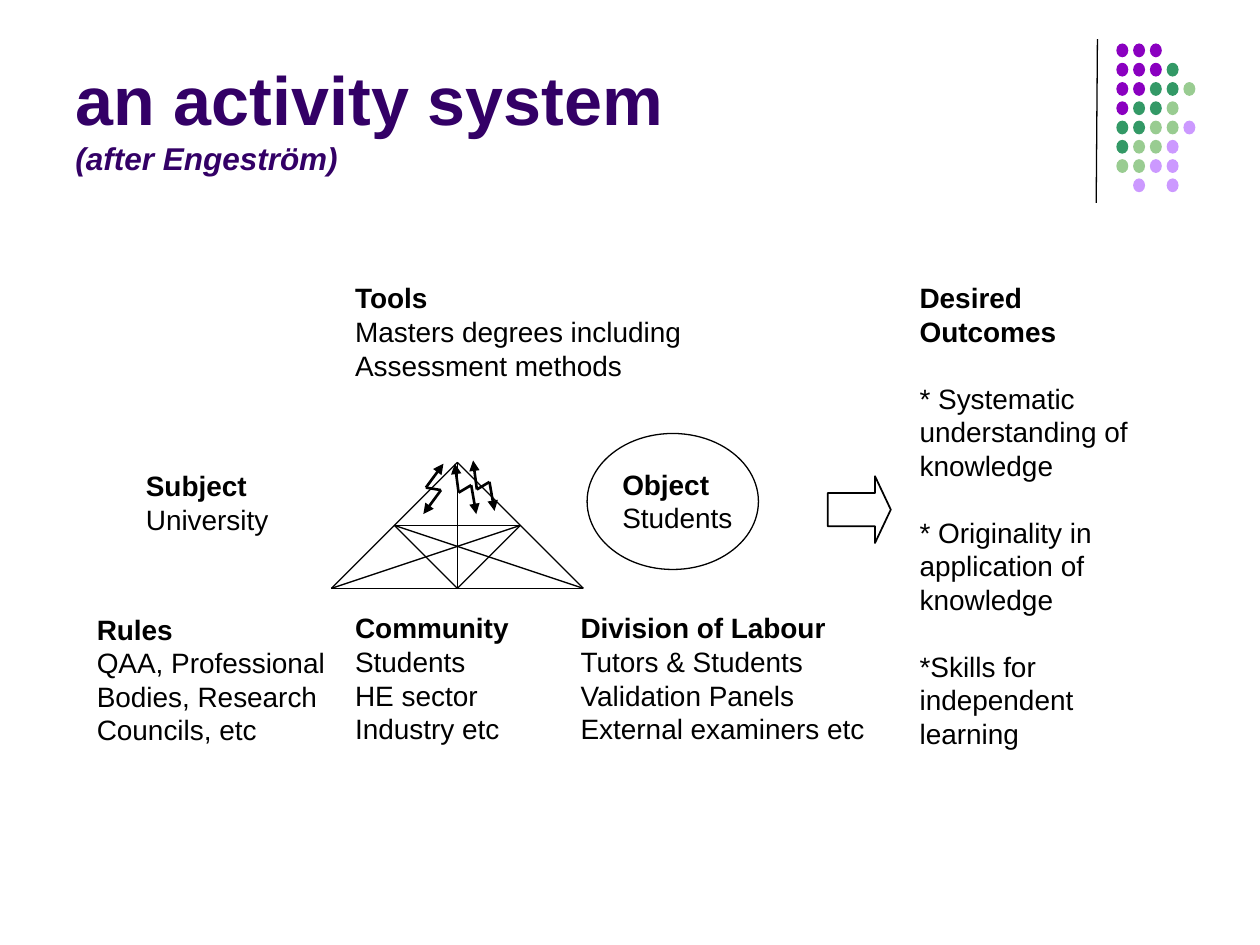
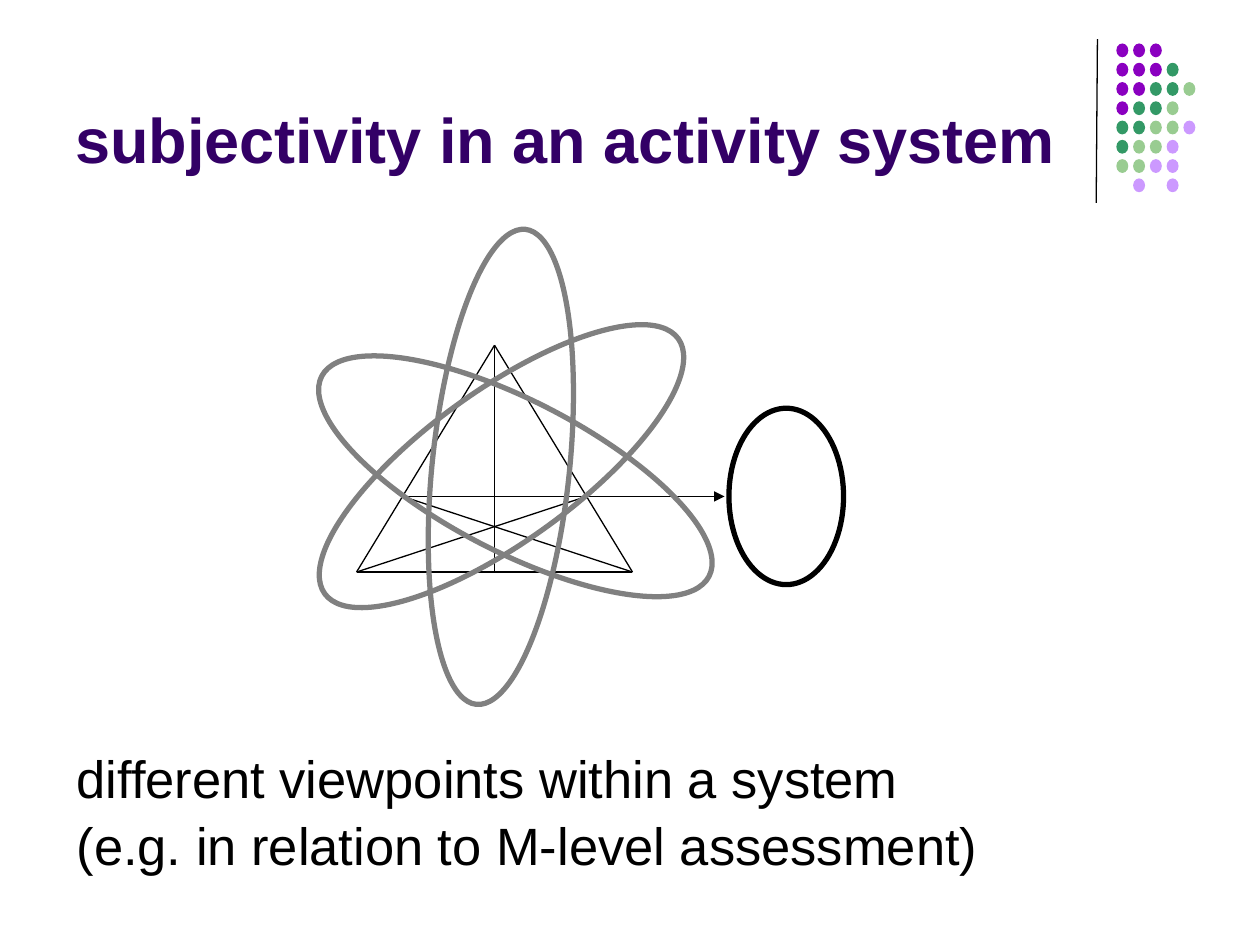
import dataclasses
import itertools
import typing

import pptx
import pptx.dml.color
import pptx.enum.shapes
import pptx.enum.text
import pptx.oxml
import pptx.oxml.ns
import pptx.util

RGB = pptx.dml.color.RGBColor
SHAPE = pptx.enum.shapes.MSO_SHAPE
ANCHOR = pptx.enum.text.MSO_ANCHOR
Pt = pptx.util.Pt

BLACK = RGB(0x00, 0x00, 0x00)
WHITE = RGB(0xFF, 0xFF, 0xFF)
GREY = RGB(0x80, 0x80, 0x80)
INDIGO = RGB(0x33, 0x00, 0x66)
PURPLE = RGB(0x8A, 0x00, 0xC0)
GREEN = RGB(0x33, 0x99, 0x66)
LIGHT_GREEN = RGB(0x99, 0xCC, 0x91)
LILAC = RGB(0xCC, 0x99, 0xFF)

FONT = "Arial"
PAGE_WIDTH, PAGE_HEIGHT = pptx.util.Inches(10), pptx.util.Inches(7.5)
COLUMN, ROW = PAGE_WIDTH / 100, PAGE_HEIGHT / 75

DOT_COLOURS = {"P": PURPLE, "G": GREEN, "L": LIGHT_GREEN, "V": LILAC}
DOT_ROWS = ("PPP", "PPPG", "PPGGL", "PGGL", "GGLLV", "GLLV", "LLVV", " V V")


class Point(typing.NamedTuple):
    """A place in grid columns and rows."""
    x: float
    y: float

    def moved(self, x: float, y: float) -> "Point":
        return Point(self.x + x, self.y + y)


class Area(typing.NamedTuple):
    """A rectangle in grid columns and rows."""
    left: float
    top: float
    width: float
    height: float

    def lengths(self) -> tuple[int, int, int, int]:
        return (round(self.left * COLUMN), round(self.top * ROW),
                round(self.width * COLUMN), round(self.height * ROW))


@dataclasses.dataclass(frozen=True)
class Span:
    text: str
    size: float
    bold: bool = False
    italic: bool = False
    colour: RGB = BLACK


@dataclasses.dataclass(frozen=True)
class Label:
    """A bold heading with plain lines below it."""
    area: Area
    headings: tuple[str, ...]
    lines: tuple[str, ...]
    gap: float = 0


@dataclasses.dataclass(frozen=True)
class Triangle:
    """Activity triangle; share tells how far down its sides the crossbar lies."""
    apex: Point
    left: Point
    right: Point
    share: float

    def side_point(self, corner: Point) -> Point:
        return Point(self.apex.x + (corner.x - self.apex.x) * self.share,
                     self.apex.y + (corner.y - self.apex.y) * self.share)

    @property
    def foot(self) -> Point:
        return Point(self.apex.x, self.left.y)

    @property
    def subject(self) -> Point:
        return self.side_point(self.left)

    @property
    def object(self) -> Point:
        return self.side_point(self.right)


@dataclasses.dataclass(frozen=True)
class Viewpoint:
    area: Area
    rotation: float


TITLE_AREA = Area(5, 2.7, 82.5, 11.8)

LABELS = (
    Label(Area(10.6, 36.7, 19.4, 7.5), ("Subject",), ("University",)),
    Label(Area(48.4, 36.6, 11.8, 7.6), ("Object",), ("Students",)),
    Label(Area(45.1, 48, 25.7, 12.4), ("Division of Labour",),
          ("Tutors & Students", "Validation Panels", "External examiners etc")),
    Label(Area(27.2, 48, 17.9, 12.4), ("Community",),
          ("Students", "HE sector", "Industry etc")),
    Label(Area(6.7, 48.1, 21.3, 12.3), ("Rules",),
          ("QAA, Professional Bodies, Research Councils, etc",)),
    Label(Area(27.2, 21.8, 31.5, 11.8), ("Tools",),
          ("Masters degrees including", "Assessment methods")),
    Label(Area(72, 21.8, 18.9, 37.8), ("Desired", "Outcomes"),
          ("* Systematic understanding of knowledge",
           "* Originality in application of knowledge",
           "*Skills for independent learning"), gap=19),
)

MIDDLE_ZIGZAG = (Point(36.1, 36.8), Point(36.4, 39.1), Point(37.4, 38.5), Point(37.8, 40.8))
ZIGZAGS = (
    (Point(35.2, 36.8), Point(33.8, 38.7), Point(35, 38.9), Point(33.6, 40.8)),
    MIDDLE_ZIGZAG,
    tuple(point.moved(1.45, -0.25) for point in MIDDLE_ZIGZAG),
)

VIEWPOINTS = (
    Viewpoint(Area(34.9, 20.5, 12, 34.6), 117.3),
    Viewpoint(Area(34.3, 18.1, 10.9, 37.9), 5.9),
    Viewpoint(Area(33.8, 19.7, 12, 34.6), 54.2),
)


def add_span(para, span: Span) -> None:
    run = para.add_run()
    run.text = span.text
    font = run.font
    font.name, font.size = FONT, Pt(span.size)
    font.bold, font.italic = span.bold, span.italic
    font.color.rgb = span.colour


def add_text(page, area: Area, paras: typing.Sequence[typing.Sequence[Span]], *,
             anchor=ANCHOR.TOP, line_spacing: float | None = None,
             gaps: typing.Sequence[float] = ()) -> None:
    """Each para is a row of spans, one to a line; gaps are points before paras."""
    frame = page.shapes.add_textbox(*area.lengths()).text_frame
    frame.word_wrap = True
    frame.vertical_anchor = anchor
    for index, (spans, gap) in enumerate(itertools.zip_longest(paras, gaps, fillvalue=0)):
        para = frame.paragraphs[0] if index == 0 else frame.add_paragraph()
        para.space_before = Pt(gap)
        if line_spacing:
            para.line_spacing = line_spacing
        for number, span in enumerate(spans):
            if number:
                para.add_line_break()
            add_span(para, span)


def add_label(page, label: Label) -> None:
    paras = [[Span(text, 16, bold=True)] for text in label.headings]
    paras += [[Span(text, 16)] for text in label.lines]
    gaps = [0] * len(label.headings) + [label.gap] * len(label.lines)
    add_text(page, label.area, paras, gaps=gaps)


def add_line(page, start: Point, end: Point, *, width: float = 0.75,
             arrow: bool = False) -> None:
    line = page.shapes.add_connector(
        pptx.enum.shapes.MSO_CONNECTOR.STRAIGHT,
        round(start.x * COLUMN), round(start.y * ROW),
        round(end.x * COLUMN), round(end.y * ROW))
    line.line.color.rgb = BLACK
    line.line.width = Pt(width)
    if arrow:
        tip = pptx.oxml.parse_xml(
            f'<a:tailEnd {pptx.oxml.ns.nsdecls("a")} type="triangle"/>')
        line.line._get_or_add_ln().append(tip)
    line._element.spPr.append(
        pptx.oxml.parse_xml(f'<a:effectLst {pptx.oxml.ns.nsdecls("a")}/>'))


def add_figure(page, kind, area: Area, *, fill: RGB | None = None,
               line: RGB | None = None, width: float = 0.75, rotation: float = 0):
    figure = page.shapes.add_shape(kind, *area.lengths())
    figure.shadow.inherit = False
    figure.rotation = rotation
    if fill is None:
        figure.fill.background()
    else:
        figure.fill.solid()
        figure.fill.fore_color.rgb = fill
    if line is None:
        figure.line.fill.background()
    else:
        figure.line.color.rgb = line
        figure.line.width = Pt(width)
    return figure


def add_triangle(page, triangle: Triangle) -> None:
    """Draw the sides, the height and the two diagonals."""
    for start, end in (
        (triangle.left, triangle.right),
        (triangle.apex, triangle.foot),
        (triangle.apex, triangle.left),
        (triangle.apex, triangle.right),
        (triangle.left, triangle.object),
        (triangle.subject, triangle.right),
    ):
        add_line(page, start, end)


def add_zigzag(page, points: typing.Sequence[Point]) -> None:
    top, upper_kink, lower_kink, bottom = points
    add_line(page, upper_kink, top, width=1.5, arrow=True)
    add_line(page, upper_kink, lower_kink, width=1.5)
    add_line(page, lower_kink, bottom, width=1.5, arrow=True)


def add_page(deck, title: typing.Sequence[Span]):
    """Add a page with the rule, the dot pattern and a title."""
    page = deck.slides.add_slide(deck.slide_layouts[6])
    add_line(page, Point(87.1, 3.1), Point(87, 16.1))
    for row, letters in enumerate(DOT_ROWS):
        for column, letter in enumerate(letters):
            if letter in DOT_COLOURS:
                area = Area(88.6 + 1.33 * column, 3.45 + 1.53 * row, 0.95, 1.1)
                add_figure(page, SHAPE.OVAL, area, fill=DOT_COLOURS[letter])
    add_text(page, TITLE_AREA, [title], anchor=ANCHOR.BOTTOM)
    return page


def add_activity_page(deck) -> None:
    page = add_page(deck, (
        Span("an activity system", 39, bold=True, colour=INDIGO),
        Span("(after Engeström)", 18, bold=True, italic=True, colour=INDIGO)))
    triangle = Triangle(Point(36.3, 36.7), Point(26.3, 46.7), Point(46.3, 46.7), 1 / 2)
    add_triangle(page, triangle)
    add_line(page, triangle.subject, triangle.object)
    for corner in (triangle.subject, triangle.object):
        add_line(page, triangle.foot, corner)
    for zigzag in ZIGZAGS:
        add_zigzag(page, zigzag)
    arrow = add_figure(page, SHAPE.RIGHT_ARROW, Area(65.7, 37.8, 5, 5.3),
                       line=BLACK, width=1)
    arrow.adjustments[0], arrow.adjustments[1] = 0.5, 0.25
    add_figure(page, SHAPE.OVAL, Area(46.6, 34.4, 13.6, 10.8), line=BLACK)
    for label in LABELS:
        add_label(page, label)


def add_subjectivity_page(deck) -> None:
    page = add_page(deck, (
        Span("subjectivity in an activity system", 36, bold=True, colour=INDIGO),))
    add_text(page, Area(5.1, 59.3, 90, 9.9),
             [[Span("different viewpoints within a system", 30)],
              [Span("(e.g. in relation to M-level assessment)", 30)]],
             line_spacing=0.9, gaps=(6, 6))
    triangle = Triangle(Point(39.25, 27.4), Point(28.3, 45.4), Point(50.2, 45.4), 2 / 3)
    add_triangle(page, triangle)
    add_line(page, triangle.subject, Point(57.5, triangle.subject.y), arrow=True)
    for viewpoint in VIEWPOINTS:
        add_figure(page, SHAPE.OVAL, viewpoint.area, line=GREY, width=3,
                   rotation=viewpoint.rotation)
    add_figure(page, SHAPE.OVAL, Area(57.85, 32.4, 9.1, 14), fill=WHITE,
               line=BLACK, width=3)


def main() -> None:
    deck = pptx.Presentation()
    deck.slide_width, deck.slide_height = PAGE_WIDTH, PAGE_HEIGHT
    add_activity_page(deck)
    add_subjectivity_page(deck)
    deck.save("out.pptx")


if __name__ == "__main__":
    main()
